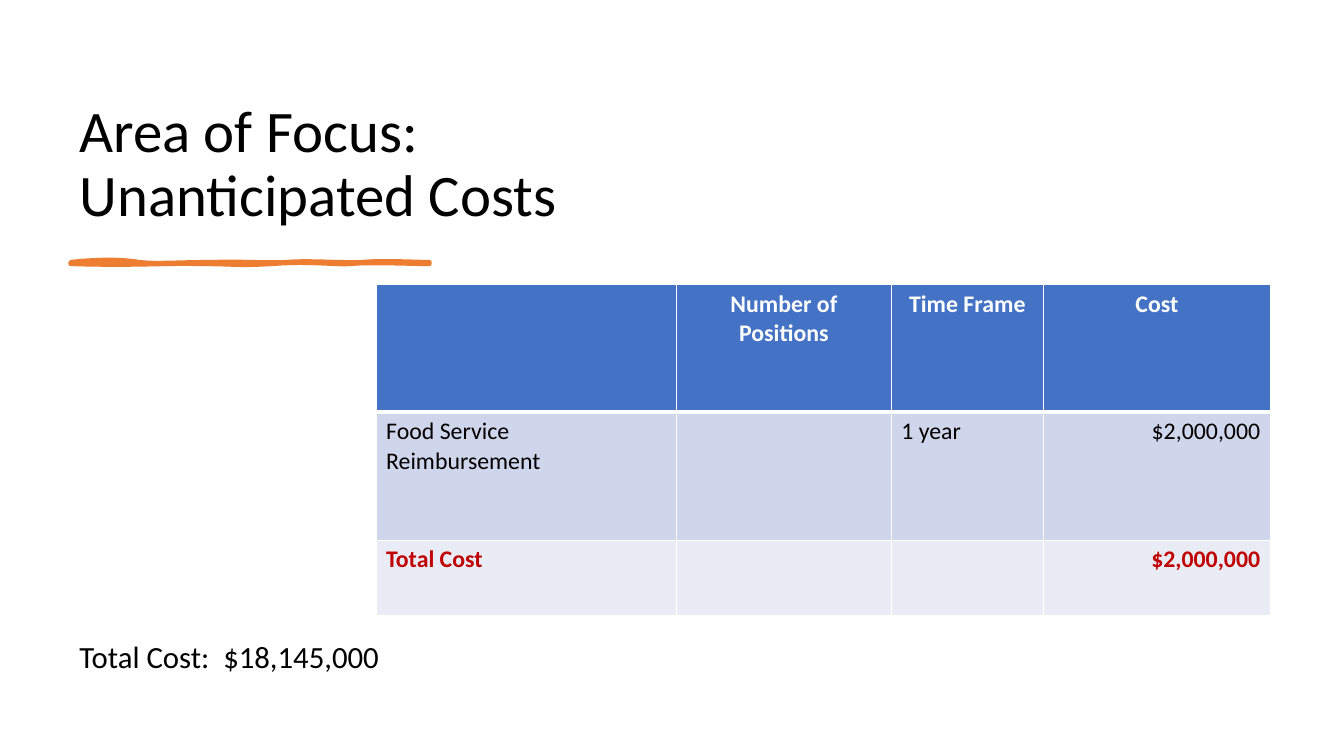
from lxml import etree
from pptx import Presentation, util as u
from pptx.dml.color import RGBColor
from pptx.enum import text
from pptx.oxml.ns import qn

BLACK = RGBColor(0, 0, 0)
WHITE = RGBColor(255, 255, 255)
ORANGE = RGBColor(0xED, 0x7D, 0x31)
BLUE = RGBColor(0x44, 0x72, 0xC4)
PALE = RGBColor(0xCF, 0xD5, 0xEA)
MIST = RGBColor(0xE9, 0xEB, 0xF5)
RED = RGBColor(0xC0, 0, 0)
FONT = "Calibri"
LEFT, CENTER, RIGHT = (text.PP_ALIGN.LEFT, text.PP_ALIGN.CENTER,
                       text.PP_ALIGN.RIGHT)

TITLE = "Area of Focus: Unanticipated Costs"
TOTAL = "Total Cost:  $18,145,000"
COLS = [2.98, 2.13, 1.51, 2.25]
ALIGNS = [LEFT, LEFT, LEFT, RIGHT]
# height, fill, font colour, bold, alignments, cells
ROWS = [
    (1.27, BLUE, WHITE, True, [CENTER] * 4,
     ["", "Number of Positions", "Time Frame", "Cost"]),
    (1.27, PALE, BLACK, False, ALIGNS,
     ["Food Service Reimbursement", "", "1 year", "$2,000,000"]),
    (0.75, MIST, RED, True, ALIGNS, ["Total Cost", "", "", "$2,000,000"]),
]
# Brush stroke: start point, then two handles and an end point per curve
START = (0.7, 2.6)
CURVES = [
    ((0.97, 2.57), (1.21, 2.57), (1.38, 2.6)),
    ((1.55, 2.62), (1.77, 2.6), (2.09, 2.6)),
    ((2.41, 2.59), (2.6, 2.61), (2.84, 2.6)),
    ((3.08, 2.58), (3.39, 2.61), (3.59, 2.6)),
    ((3.79, 2.58), (4.12, 2.6), (4.26, 2.6)),
    ((4.26, 2.6), (4.26, 2.61), (4.26, 2.62)),
    ((4.08, 2.62), (3.64, 2.6), (3.48, 2.62)),
    ((3.32, 2.63), (3.04, 2.59), (2.7, 2.62)),
    ((2.35, 2.64), (2.31, 2.62), (1.99, 2.62)),
    ((1.66, 2.61), (1.32, 2.64), (0.7, 2.62)),
]
STEPS = 10


def style(para, size, color, bold=False):
    font = para.font
    font.name, font.size, font.bold = FONT, u.Pt(size), bold
    font.color.rgb = color


def add_label(slide, words, top, height, size, anchor):
    box = slide.shapes.add_textbox(u.Inches(0.69), u.Inches(top),
                                   u.Inches(5.27), u.Inches(height))
    frame = box.text_frame
    frame.word_wrap = True
    frame.vertical_anchor = anchor
    para = frame.paragraphs[0]
    para.text = words
    para.line_spacing = 0.9
    style(para, size, BLACK)


def flatten(start, curves):
    """Return points along a chain of cubic curves, in EMU."""
    points = [tuple(map(u.Inches, start))]
    for a, b, end in curves:
        for step in range(1, STEPS + 1):
            t = step / STEPS
            s = 1 - t
            parts = (s**3, 3 * s * s * t, 3 * s * t * t, t**3)
            knots = (start, a, b, end)
            points.append(tuple(
                u.Inches(sum(w * k[i] for w, k in zip(parts, knots)))
                for i in (0, 1)))
        start = end
    return points


def add_brush(slide):
    first, *rest = flatten(START, CURVES)
    pen = slide.shapes.build_freeform(*first)
    pen.add_line_segments(rest, close=True)
    brush = pen.convert_to_shape()
    brush.shadow.inherit = False
    brush.fill.solid()
    brush.fill.fore_color.rgb = ORANGE
    brush.line.color.rgb = ORANGE
    brush.line.width = u.Pt(3)


def set_borders(cell, top, bottom):
    props = cell._tc.get_or_add_tcPr()
    for side, width in (("L", 1), ("R", 1), ("T", top), ("B", bottom)):
        line = etree.SubElement(props, qn("a:ln" + side), w=str(u.Pt(width)))
        fill = etree.SubElement(line, qn("a:solidFill"))
        etree.SubElement(fill, qn("a:srgbClr"), val=str(WHITE))


def add_costs(slide):
    table = slide.shapes.add_table(
        len(ROWS), len(COLS), u.Inches(3.73), u.Inches(2.82),
        u.Inches(sum(COLS)), u.Inches(sum(row[0] for row in ROWS))).table
    for col, width in zip(table.columns, COLS):
        col.width = u.Inches(width)
    for r, (height, fill, color, bold, aligns, words) in enumerate(ROWS):
        table.rows[r].height = u.Inches(height)
        for c, word in enumerate(words):
            cell = table.cell(r, c)
            set_borders(cell, 3 if r == 1 else 1, 3 if r == 0 else 1)
            cell.fill.solid()
            cell.fill.fore_color.rgb = fill
            para = cell.text_frame.paragraphs[0]
            para.text = word
            para.alignment = aligns[c]
            style(para, 17, color, bold)


def main():
    deck = Presentation()
    deck.slide_width, deck.slide_height = u.Inches(13.33), u.Inches(7.5)
    slide = deck.slides.add_slide(deck.slide_layouts[6])
    add_label(slide, TITLE, 0.7, 1.62, 42, text.MSO_ANCHOR.BOTTOM)
    add_brush(slide)
    add_label(slide, TOTAL, 6.32, 0.47, 22, text.MSO_ANCHOR.TOP)
    add_costs(slide)
    deck.save("out.pptx")


if __name__ == "__main__":
    main()
